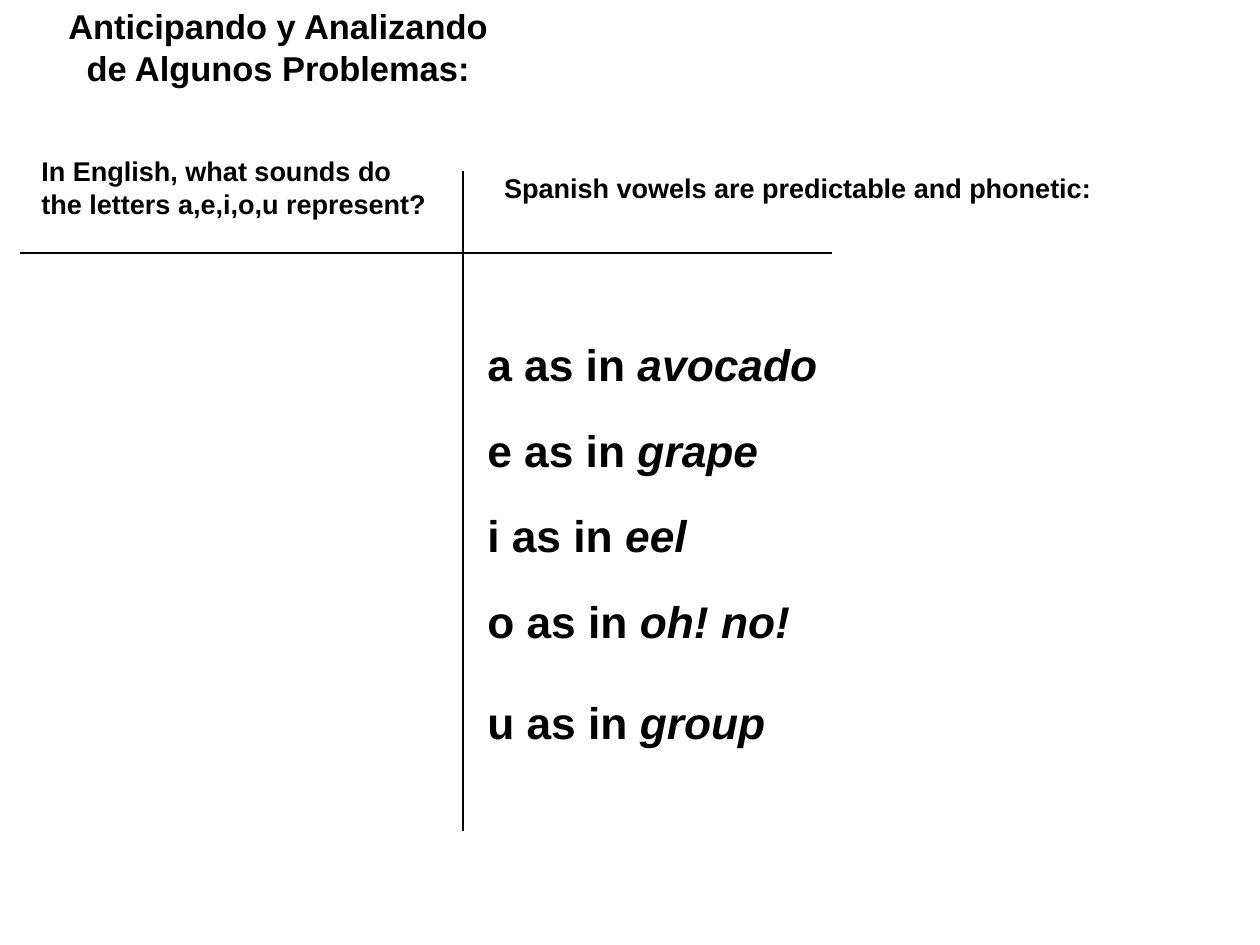
from dataclasses import dataclass

from lxml import etree
from pptx import Presentation
from pptx.dml.color import RGBColor
from pptx.enum.shapes import MSO_CONNECTOR
from pptx.enum.text import MSO_ANCHOR, MSO_AUTO_SIZE, PP_ALIGN
from pptx.oxml.ns import qn
from pptx.shapes.autoshape import Shape
from pptx.slide import Slide
from pptx.util import Cm, Pt

BLACK = RGBColor(0x00, 0x00, 0x00)
FONT = "Arial"
STRAIGHT = MSO_CONNECTOR.STRAIGHT
MIDDLE = MSO_ANCHOR.MIDDLE
FIT_SHAPE = MSO_AUTO_SIZE.SHAPE_TO_FIT_TEXT
LEFT = PP_ALIGN.LEFT
CENTER = PP_ALIGN.CENTER

INSET = 0.15
VOWEL_LEFT, VOWEL_HEIGHT = 13.82, 1.8
FIRST_VOWEL_TOP, VOWEL_PITCH = 9.53, 2.46


@dataclass(frozen=True)
class Box:
    left: float
    top: float
    width: float
    height: float


@dataclass(frozen=True)
class Heading:
    text: str
    box: Box


@dataclass(frozen=True)
class Vowel:
    letter: str
    example: str
    width: float
    extra_gap: float = 0


@dataclass(frozen=True)
class Rule:
    x1: float
    y1: float
    x2: float
    y2: float


TITLE = Heading("Anticipando y Analizando\nde Algunos Problemas:", Box(1.8, 0, 12.34, 2.69))
HEADINGS = [
    Heading("In English, what sounds do\nthe letters a,e,i,o,u represent?", Box(1.04, 4.32, 11.58, 2.11)),
    Heading("Spanish vowels are predictable and phonetic:", Box(14.3, 4.78, 17.4, 1.19)),
]
VOWELS = [
    Vowel("a", "avocado", 9.78),
    Vowel("e", "grape", 8.08),
    Vowel("i", "eel", 6.05),
    Vowel("o", "oh! no!", 8.99),
    Vowel("u", "group", 8.28, extra_gap=0.42),
]
RULES = [Rule(0.58, 7.26, 23.85, 7.26), Rule(13.28, 23.83, 13.28, 4.9)]


def add_box(slide: Slide, box: Box) -> Shape:
    return slide.shapes.add_textbox(Cm(box.left), Cm(box.top), Cm(box.width), Cm(box.height))


def format_text(shape: Shape, size: int, align: PP_ALIGN = LEFT) -> None:
    frame = shape.text_frame
    frame.margin_left = frame.margin_right = Cm(INSET)
    frame.margin_top = frame.margin_bottom = Cm(INSET)
    frame.vertical_anchor = MIDDLE
    frame.word_wrap = False
    frame.auto_size = FIT_SHAPE
    for paragraph in frame.paragraphs:
        paragraph.alignment = align
        for run in paragraph.runs:
            run.font.name = FONT
            run.font.size = Pt(size)
            run.font.bold = True
            run.font.color.rgb = BLACK


def place_title(slide: Slide) -> None:
    title, box = slide.shapes.title, TITLE.box
    title.left, title.top = Cm(box.left), Cm(box.top)
    title.width, title.height = Cm(box.width), Cm(box.height)
    title.text_frame.text = TITLE.text
    format_text(title, 28, CENTER)


def add_heading(slide: Slide, heading: Heading) -> None:
    shape = add_box(slide, heading.box)
    shape.text_frame.text = heading.text
    format_text(shape, 22)


def add_vowel(slide: Slide, vowel: Vowel, row: int) -> None:
    top = FIRST_VOWEL_TOP + row * VOWEL_PITCH + vowel.extra_gap
    shape = add_box(slide, Box(VOWEL_LEFT, top, vowel.width, VOWEL_HEIGHT))
    paragraph = shape.text_frame.paragraphs[0]
    paragraph.text = f"{vowel.letter} as in "
    example = paragraph.add_run()
    example.text = vowel.example
    example.font.italic = True
    format_text(shape, 36)


def add_rule(slide: Slide, rule: Rule) -> None:
    line = slide.shapes.add_connector(STRAIGHT, Cm(rule.x1), Cm(rule.y1), Cm(rule.x2), Cm(rule.y2))
    line.line.color.rgb = BLACK
    line.line.width = Pt(2)
    etree.SubElement(line._element.spPr, qn("a:effectLst"))


def main() -> None:
    presentation = Presentation()
    presentation.slide_width, presentation.slide_height = Cm(36.12), Cm(27.1)
    slide = presentation.slides.add_slide(presentation.slide_layouts.get_by_name("Title Only"))
    place_title(slide)
    for rule in RULES:
        add_rule(slide, rule)
    for heading in HEADINGS:
        add_heading(slide, heading)
    for row, vowel in enumerate(VOWELS):
        add_vowel(slide, vowel, row)
    presentation.save("out.pptx")


if __name__ == "__main__":
    main()
